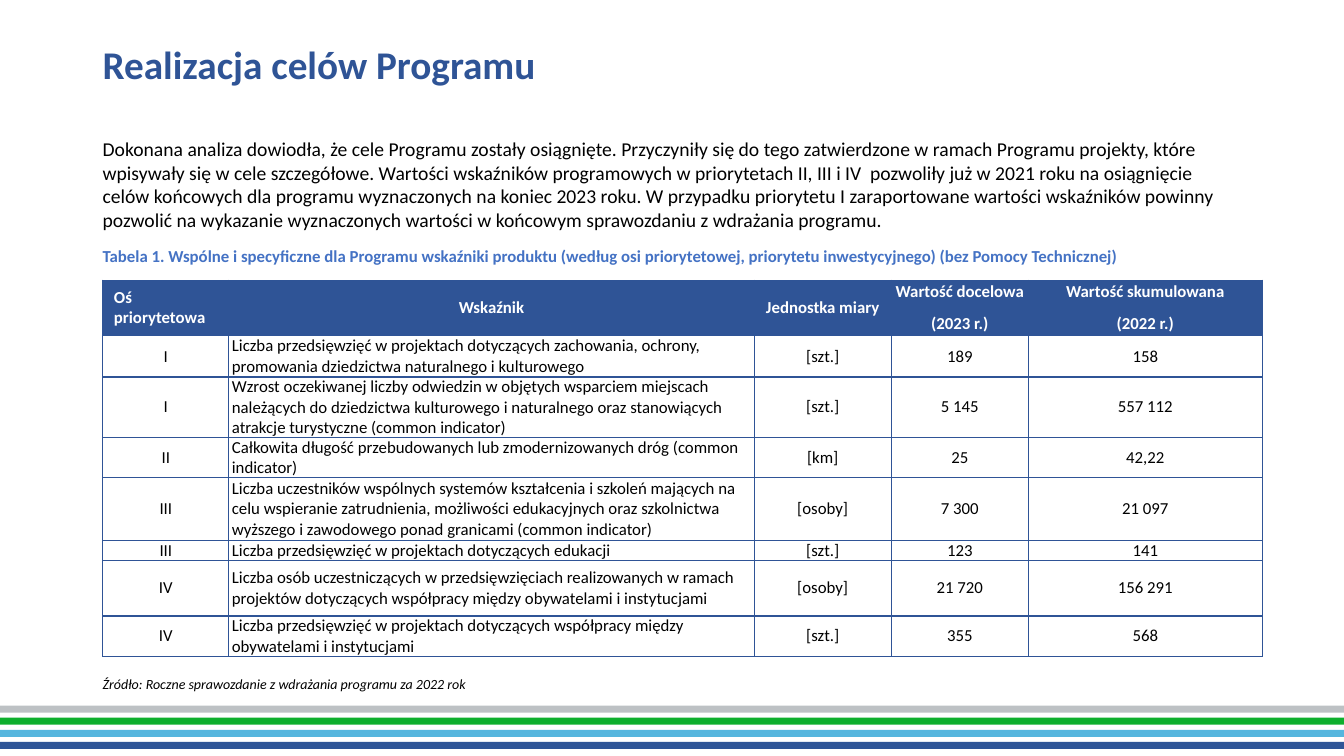
from lxml.etree import SubElement
from pptx import Presentation
from pptx.dml.color import RGBColor
from pptx.enum.shapes import MSO_SHAPE
from pptx.enum.text import MSO_ANCHOR, MSO_AUTO_SIZE, PP_ALIGN
from pptx.oxml.ns import qn
from pptx.util import Emu, Pt

EMU_PER_PX = 9144
FONT = "Calibri"
COLORS = {
    "navy": "2F5496", "caption": "4472C4", "black": "000000", "white": "FFFFFF",
    "stripe_gray": "BDC1C4", "stripe_green": "0EAF2D",
    "stripe_sky": "56B6DE", "stripe_navy": "2F5597",
}
STRIPES = ["stripe_gray", "stripe_green", "stripe_sky", "stripe_navy"]
COLUMN_WIDTHS = [125, 521, 136, 136, 232]
ROW_HEIGHTS = [55, 41, 60, 40, 62, 20, 55, 40]
INDICATOR_COLUMN = 1

TITLE = "Realizacja celów Programu"
SUMMARY = (
    "Dokonana analiza dowiodła, że cele Programu zostały osiągnięte. "
    "Przyczyniły się do tego zatwierdzone w ramach Programu projekty, które "
    "wpisywały się w cele szczegółowe. Wartości wskaźników programowych w "
    "priorytetach II, III i IV  pozwoliły już w 2021 roku na osiągnięcie celów "
    "końcowych dla programu wyznaczonych na koniec 2023 roku. W przypadku "
    "priorytetu I zaraportowane wartości wskaźników powinny pozwolić na "
    "wykazanie wyznaczonych wartości w końcowym sprawozdaniu z wdrażania programu."
)
CAPTION = (
    "Tabela 1. Wspólne i specyficzne dla Programu wskaźniki produktu (według osi "
    "priorytetowej, priorytetu inwestycyjnego) (bez Pomocy Technicznej)"
)
SOURCE = "Źródło: Roczne sprawozdanie z wdrażania programu za 2022 rok"
INDICATORS = [
    ["Oś priorytetowa", "Wskaźnik", "Jednostka miary",
     "Wartość docelowa\n(2023 r.)", "Wartość skumulowana\n(2022 r.)"],
    ["I", "Liczba przedsięwzięć w projektach dotyczących zachowania, ochrony, "
     "promowania dziedzictwa naturalnego i kulturowego", "[szt.]", "189", "158"],
    ["I", "Wzrost oczekiwanej liczby odwiedzin w objętych wsparciem miejscach "
     "należących do dziedzictwa kulturowego i naturalnego oraz stanowiących "
     "atrakcje turystyczne (common indicator)", "[szt.]", "5 145", "557 112"],
    ["II", "Całkowita długość przebudowanych lub zmodernizowanych dróg "
     "(common indicator)", "[km]", "25", "42,22"],
    ["III", "Liczba uczestników wspólnych systemów kształcenia i szkoleń mających "
     "na celu wspieranie zatrudnienia, możliwości edukacyjnych oraz szkolnictwa "
     "wyższego i zawodowego ponad granicami (common indicator)",
     "[osoby]", "7 300", "21 097"],
    ["III", "Liczba przedsięwzięć w projektach dotyczących edukacji",
     "[szt.]", "123", "141"],
    ["IV", "Liczba osób uczestniczących w przedsięwzięciach realizowanych w ramach "
     "projektów dotyczących współpracy między obywatelami i instytucjami",
     "[osoby]", "21 720", "156 291"],
    ["IV", "Liczba przedsięwzięć w projektach dotyczących współpracy między "
     "obywatelami i instytucjami", "[szt.]", "355", "568"],
]


def px(length):
    return Emu(length * EMU_PER_PX)


def rgb(color):
    return RGBColor.from_string(COLORS[color])


def set_font(paragraph, size, color, bold=False, italic=False):
    font = paragraph.font
    font.name = FONT
    font.size = Pt(size)
    font.bold = bold
    font.italic = italic
    font.color.rgb = rgb(color)


def add_stripe(slide, top, color):
    stripe = slide.shapes.add_shape(
        MSO_SHAPE.RECTANGLE, 0, px(top), px(1333), px(7))
    stripe.shadow.inherit = False
    stripe.fill.solid()
    stripe.fill.fore_color.rgb = rgb(color)
    stripe.line.fill.background()


def add_text(slide, bounds, text, size, color, bold=False, italic=False):
    frame = slide.shapes.add_textbox(*map(px, bounds)).text_frame
    frame.word_wrap = True
    frame.auto_size = MSO_AUTO_SIZE.SHAPE_TO_FIT_TEXT
    paragraph = frame.paragraphs[0]
    paragraph.text = text
    set_font(paragraph, size, color, bold, italic)
    return frame


def add_borders(cell):
    properties = cell._tc.get_or_add_tcPr()
    for side in ("a:lnL", "a:lnR", "a:lnT", "a:lnB"):
        border = SubElement(properties, qn(side), w=str(Pt(1)))
        fill = SubElement(border, qn("a:solidFill"))
        SubElement(fill, qn("a:srgbClr"), val=COLORS["navy"])


def fill_cell(cell, text, is_header, is_centered):
    add_borders(cell)
    if is_header:
        cell.fill.solid()
        cell.fill.fore_color.rgb = rgb("navy")
    else:
        cell.fill.background()
    cell.margin_left = cell.margin_right = px(3)
    cell.margin_top = cell.margin_bottom = 0
    cell.vertical_anchor = MSO_ANCHOR.MIDDLE
    cell.text = text
    for paragraph in cell.text_frame.paragraphs:
        paragraph.alignment = PP_ALIGN.CENTER if is_centered else PP_ALIGN.LEFT
        paragraph.space_after = Pt(8)
        set_font(paragraph, 12, "white" if is_header else "black", is_header)


def add_indicator_table(slide, left, top):
    table = slide.shapes.add_table(
        len(ROW_HEIGHTS), len(COLUMN_WIDTHS), px(left), px(top),
        px(sum(COLUMN_WIDTHS)), px(sum(ROW_HEIGHTS))).table
    table.horz_banding = False
    for column, width in zip(table.columns, COLUMN_WIDTHS):
        column.width = px(width)
    for row, height in zip(table.rows, ROW_HEIGHTS):
        row.height = px(height)
    for r, values in enumerate(INDICATORS):
        for c, value in enumerate(values):
            is_header = r == 0
            is_left = c == (0 if is_header else INDICATOR_COLUMN)
            fill_cell(table.cell(r, c), value, is_header, not is_left)
    axis_heading = table.cell(0, 0).text_frame.paragraphs[0]
    axis_heading._p.get_or_add_pPr().set("marL", str(px(8)))


def main():
    presentation = Presentation()
    presentation.slide_width = px(1333)
    presentation.slide_height = px(750)
    slide = presentation.slides.add_slide(presentation.slide_layouts[6])

    for index, color in enumerate(STRIPES):
        add_stripe(slide, 700 + 12 * index, color)

    source = add_text(slide, (92, 665, 666, 27), SOURCE, 10, "black", italic=True)
    source.paragraphs[0].alignment = PP_ALIGN.JUSTIFY
    add_indicator_table(slide, 102, 278)
    add_text(slide, (92, 239, 1195, 30), CAPTION, 12, "caption", bold=True)
    summary = add_text(slide, (92, 131, 1150, 104), SUMMARY, 14, "black")
    summary.paragraphs[0].space_after = Pt(8)
    title = add_text(slide, (92, 34, 1150, 65), TITLE, 28, "navy", bold=True)
    title.auto_size = MSO_AUTO_SIZE.NONE
    title.vertical_anchor = MSO_ANCHOR.MIDDLE
    title.paragraphs[0].line_spacing = 0.9

    presentation.save("out.pptx")


if __name__ == "__main__":
    main()
